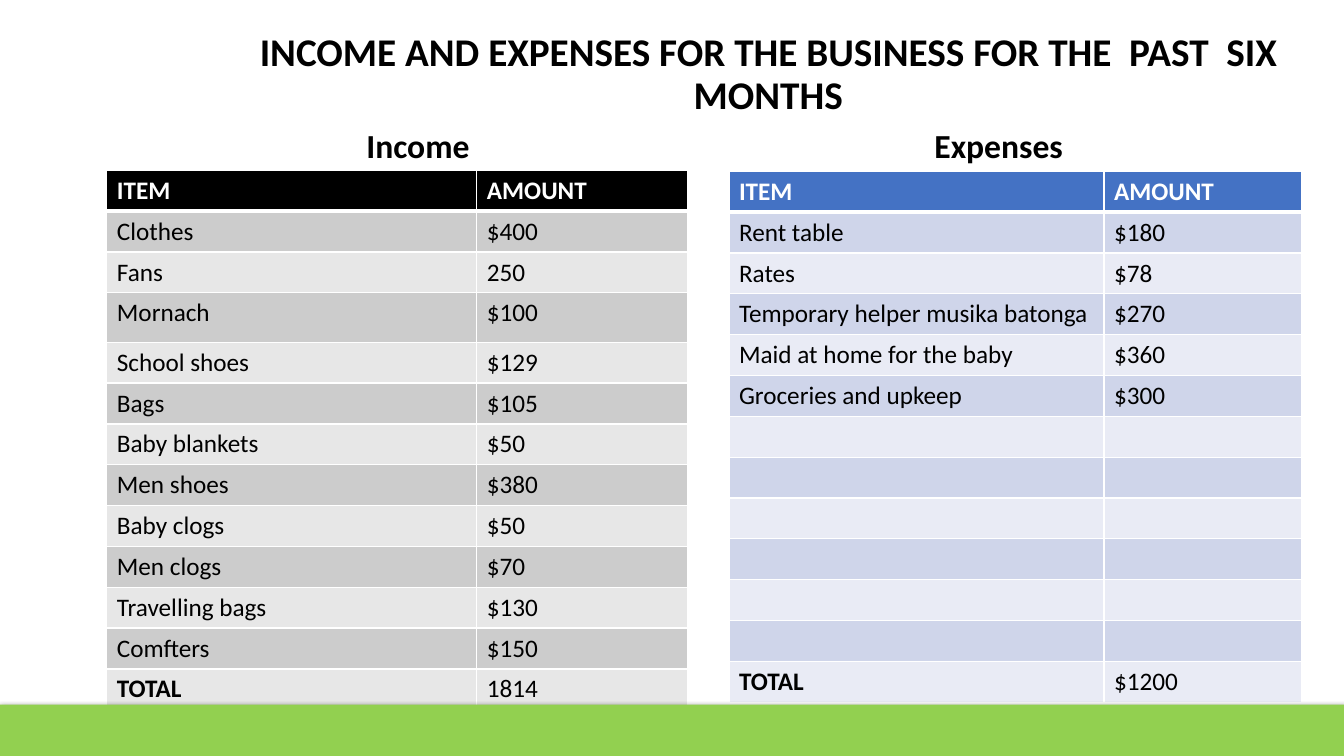
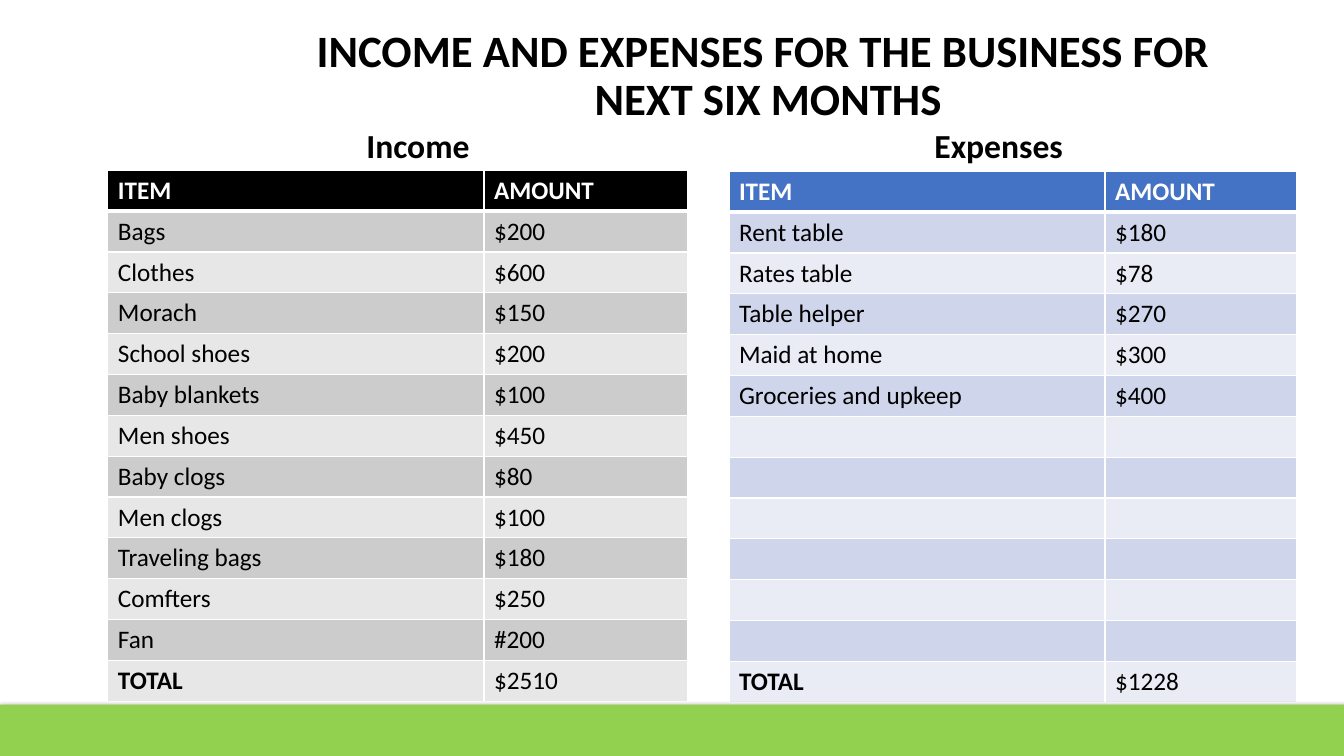
"""Build two slides comparing business income and expenses, past and planned."""
import lxml.etree
import pptx
import pptx.dml.color
import pptx.enum.shapes
import pptx.enum.text
import pptx.oxml
import pptx.oxml.ns
import pptx.util

Inches = pptx.util.Inches
Pt = pptx.util.Pt
RGB = pptx.dml.color.RGBColor.from_string
ALIGN = pptx.enum.text.PP_ALIGN
ANCHOR = pptx.enum.text.MSO_ANCHOR
qn = pptx.oxml.ns.qn

COLOURS = {"ink": "000000", "paper": "FFFFFF", "band": "92D050"}
THEMES = {
    "Income": {"header": "000000", "odd": "CCCCCC", "even": "E7E7E7"},
    "Expenses": {"header": "4472C4", "odd": "CFD5EA", "even": "E9EBF5"},
}
HEADING_LEFT = {"Income": 1.47, "Expenses": 7.23}
TABLE_TOP = {"Income": 1.69, "Expenses": 1.7}
ROW_COUNT = 13
ROW_HEIGHT = Inches(5.27) // ROW_COUNT

PERIODS = [
    {
        "title": "INCOME AND EXPENSES FOR THE BUSINESS FOR THE  PAST  SIX MONTHS",
        "title_box": (2.14, 0.35, 10.96, 0.79),
        "title_size": 28,
        "ledgers": {
            "Income": {
                "left": 1.06,
                "widths": (3.67, 2.09),
                "tall_rows": {3: 0.49},
                "entries": [
                    ("Clothes", "$400"), ("Fans", "250"), ("Mornach", "$100"),
                    ("School shoes", "$129"), ("Bags", "$105"),
                    ("Baby blankets", "$50"), ("Men shoes", "$380"),
                    ("Baby clogs", "$50"), ("Men clogs", "$70"),
                    ("Travelling bags", "$130"), ("Comfters", "$150"),
                ],
                "total": "1814",
            },
            "Expenses": {
                "left": 7.23,
                "widths": (3.72, 1.96),
                "tall_rows": {},
                "entries": [
                    ("Rent table", "$180"), ("Rates", "$78"),
                    ("Temporary helper musika batonga", "$270"),
                    ("Maid at home for the baby", "$360"),
                    ("Groceries and upkeep", "$300"),
                ],
                "total": "$1200",
            },
        },
    },
    {
        "title": "INCOME AND EXPENSES FOR THE BUSINESS FOR \vNEXT SIX MONTHS",
        "title_box": (2.14, 0.46, 10.96, 0.61),
        "title_size": 32,
        "ledgers": {
            "Income": {
                "left": 1.07,
                "widths": (3.73, 2.02),
                "tall_rows": {},
                "entries": [
                    ("Bags", "$200"), ("Clothes", "$600"), ("Morach", "$150"),
                    ("School shoes", "$200"), ("Baby blankets", "$100"),
                    ("Men shoes", "$450"), ("Baby clogs", "$80"),
                    ("Men clogs", "$100"), ("Traveling bags", "$180"),
                    ("Comfters", "$250"), ("Fan", "#200"),
                ],
                "total": "$2510",
            },
            "Expenses": {
                "left": 7.23,
                "widths": (3.73, 1.9),
                "tall_rows": {},
                "entries": [
                    ("Rent table", "$180"), ("Rates table", "$78"),
                    ("Table helper", "$270"), ("Maid at home", "$300"),
                    ("Groceries and upkeep", "$400"),
                ],
                "total": "$1228",
            },
        },
    },
]


def write(frame, text, size=18, colour=COLOURS["ink"], bold=False,
          align=ALIGN.LEFT, anchor=ANCHOR.TOP, line_spacing=None, before=None):
    frame.word_wrap = True
    frame.vertical_anchor = anchor
    paragraph = frame.paragraphs[0]
    paragraph.text = text
    paragraph.alignment = align
    paragraph.line_spacing = line_spacing
    paragraph.space_before = before
    for run in paragraph.runs:
        run.font.name = "Calibri"
        run.font.size = Pt(size)
        run.font.bold = bold
        run.font.color.rgb = RGB(colour)


def style_cell(cell, fill, top=1, bottom=1):
    properties = cell._tc.get_or_add_tcPr()
    sides = {"lnL": 1, "lnR": 1, "lnT": top, "lnB": bottom}
    for position, (side, width) in enumerate(sides.items()):
        border = pptx.oxml.parse_xml(
            f'<a:{side} {pptx.oxml.ns.nsdecls("a")} w="{Pt(width)}"><a:solidFill>'
            f'<a:srgbClr val="{COLOURS["paper"]}"/></a:solidFill></a:{side}>')
        properties.insert(position, border)
    cell.fill.solid()
    cell.fill.fore_color.rgb = RGB(fill)


deck = pptx.Presentation()
deck.slide_width = Inches(13.33)
deck.slide_height = Inches(7.5)

for period in PERIODS:
    slide = deck.slides.add_slide(deck.slide_layouts[6])
    title = slide.shapes.add_textbox(*map(Inches, period["title_box"]))
    write(title.text_frame, period["title"], size=period["title_size"], bold=True,
          align=ALIGN.CENTER, anchor=ANCHOR.MIDDLE, line_spacing=0.9)

    for side, ledger in period["ledgers"].items():
        theme = THEMES[side]
        heading = slide.shapes.add_textbox(
            Inches(HEADING_LEFT[side]), Inches(1.06), Inches(5.35), Inches(0.63))
        write(heading.text_frame, side, size=24, bold=True, align=ALIGN.CENTER,
              anchor=ANCHOR.BOTTOM, line_spacing=0.9, before=Pt(10))

        blanks = [("", "")] * (ROW_COUNT - 2 - len(ledger["entries"]))
        rows = [("ITEM", "AMOUNT"), *ledger["entries"], *blanks,
                ("TOTAL", ledger["total"])]
        table = slide.shapes.add_table(
            ROW_COUNT, 2, Inches(ledger["left"]), Inches(TABLE_TOP[side]),
            Inches(sum(ledger["widths"])), ROW_HEIGHT * ROW_COUNT).table
        table.horz_banding = False
        for column, width in zip(table.columns, ledger["widths"]):
            column.width = Inches(width)
        for row_index, row in enumerate(rows):
            table.rows[row_index].height = ROW_HEIGHT
            is_header = row_index == 0
            band = "header" if is_header else "odd" if row_index % 2 else "even"
            for column_index, text in enumerate(row):
                cell = table.cell(row_index, column_index)
                style_cell(cell, theme[band], top=3 if row_index == 1 else 1,
                           bottom=3 if is_header else 1)
                write(cell.text_frame, text, bold=is_header or text == "TOTAL",
                      colour=COLOURS["paper" if is_header else "ink"])
        for row_index, height in ledger["tall_rows"].items():
            table.rows[row_index].height = Inches(height)

    footer = slide.shapes.add_shape(
        pptx.enum.shapes.MSO_SHAPE.RECTANGLE,
        0, Inches(6.99), deck.slide_width, Inches(0.51))
    footer.fill.solid()
    footer.fill.fore_color.rgb = RGB(COLOURS["band"])
    footer.line.fill.background()
    footer.shadow.inherit = False
    effects = footer._element.spPr.find(qn("a:effectLst"))
    shadow = lxml.etree.SubElement(
        effects, qn("a:outerShdw"), blurRad=str(Pt(4.5)), dist=str(Pt(1.5)),
        dir="5400000", algn="ctr", rotWithShape="0")
    shade = lxml.etree.SubElement(shadow, qn("a:srgbClr"), val=COLOURS["ink"])
    lxml.etree.SubElement(shade, qn("a:alpha"), val="63000")

deck.save("out.pptx")
